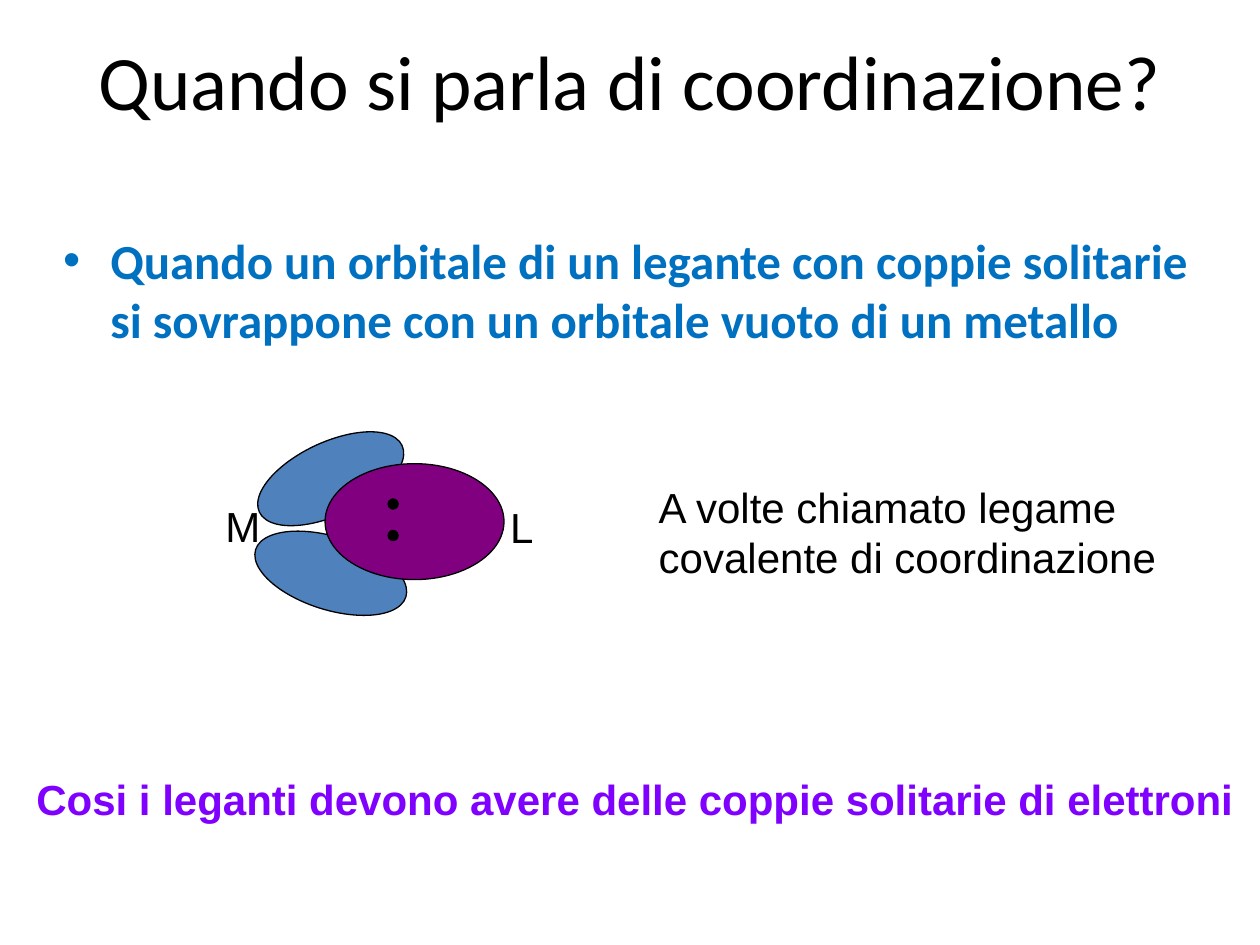
from dataclasses import dataclass

from pptx import Presentation
from pptx.dml.color import RGBColor
from pptx.enum.shapes import MSO_SHAPE
from pptx.enum.text import MSO_ANCHOR, MSO_AUTO_SIZE, PP_ALIGN
from pptx.util import Inches, Pt


@dataclass(frozen=True)
class Theme:
    black: str = "000000"
    blue: str = "0070C0"
    violet: str = "8000FF"
    metal: str = "4F81BD"
    ligand: str = "800080"
    head_font: str = "Calibri"
    text_font: str = "Arial"
    title_size: int = 44
    body_size: int = 28
    label_size: int = 24
    outline: float = 0.75


class SlideBuilder:
    def __init__(self, prs, theme):
        self.theme = theme
        self.s = prs.slides.add_slide(prs.slide_layouts[1])

    def set_text(self, sp, text, color, frame=None, para=None, **font):
        tf = sp.text_frame
        p = tf.paragraphs[0]
        r = p.add_run()
        r.text = text
        for target, values in ((tf, frame), (p, para), (r.font, font)):
            for name, value in (values or {}).items():
                setattr(target, name, value)
        r.font.color.rgb = RGBColor.from_string(color)

    def placeholder(self, index, box, text, color, size, frame=None, para=None, **font):
        sp = self.s.placeholders[index]
        sp.left, sp.top, sp.width, sp.height = map(Inches, box)
        frame = {"word_wrap": True, "auto_size": MSO_AUTO_SIZE.NONE, **(frame or {})}
        self.set_text(sp, text, color, frame, para,
                      name=self.theme.head_font, size=Pt(size), **font)

    def label(self, box, text, color=None, wrap=True, **font):
        t = self.theme
        sp = self.s.shapes.add_textbox(*map(Inches, box))
        frame = {"word_wrap": wrap, "auto_size": MSO_AUTO_SIZE.SHAPE_TO_FIT_TEXT}
        self.set_text(sp, text, color or t.black, frame,
                      name=t.text_font, size=Pt(t.label_size), **font)

    def ellipse(self, box, fill, rotation=0):
        sp = self.s.shapes.add_shape(MSO_SHAPE.OVAL, *map(Inches, box))
        sp.rotation = rotation
        sp.shadow.inherit = False
        sp.fill.solid()
        sp.fill.fore_color.rgb = RGBColor.from_string(fill)
        sp.line.color.rgb = RGBColor.from_string(self.theme.black)
        sp.line.width = Pt(self.theme.outline)


def main():
    prs = Presentation()
    prs.slide_width, prs.slide_height = Inches(10), Inches(7.5)
    t = Theme()
    b = SlideBuilder(prs, t)

    b.placeholder(0, (0, 0.01, 10, 1.25), "Quando si parla di coordinazione?",
                  t.black, t.title_size, {"vertical_anchor": MSO_ANCHOR.MIDDLE},
                  {"alignment": PP_ALIGN.CENTER})
    b.placeholder(1, (0.4, 1.78, 9.45, 1.26),
                  "Quando un orbitale di un legante con coppie solitarie "
                  "si sovrappone con un orbitale vuoto di un metallo",
                  t.blue, t.body_size, {"vertical_anchor": MSO_ANCHOR.TOP}, bold=True)

    b.label((1.69, 3.92, 0.2, 0.5), "M")
    for top, rotation in ((3.51, 335), (4.26, 17.5)):
        b.ellipse((2, top, 1.25, 0.58), t.metal, rotation)
    b.label((3.95, 3.93, 0.39, 0.5), "L", wrap=False)
    b.ellipse((2.58, 3.68, 1.42, 0.92), t.ligand)
    for top in (3.96, 4.21):
        b.ellipse((3.08, top, 0.08, 0.08), t.black)

    b.label((0.19, 6.09, 9.88, 0.5),
            "Cosi i leganti devono avere delle coppie solitarie di elettroni",
            t.violet, bold=True)
    b.label((5.13, 3.77, 4.47, 0.91),
            "A volte chiamato legame covalente di coordinazione")
    prs.save("out.pptx")


if __name__ == "__main__":
    main()
